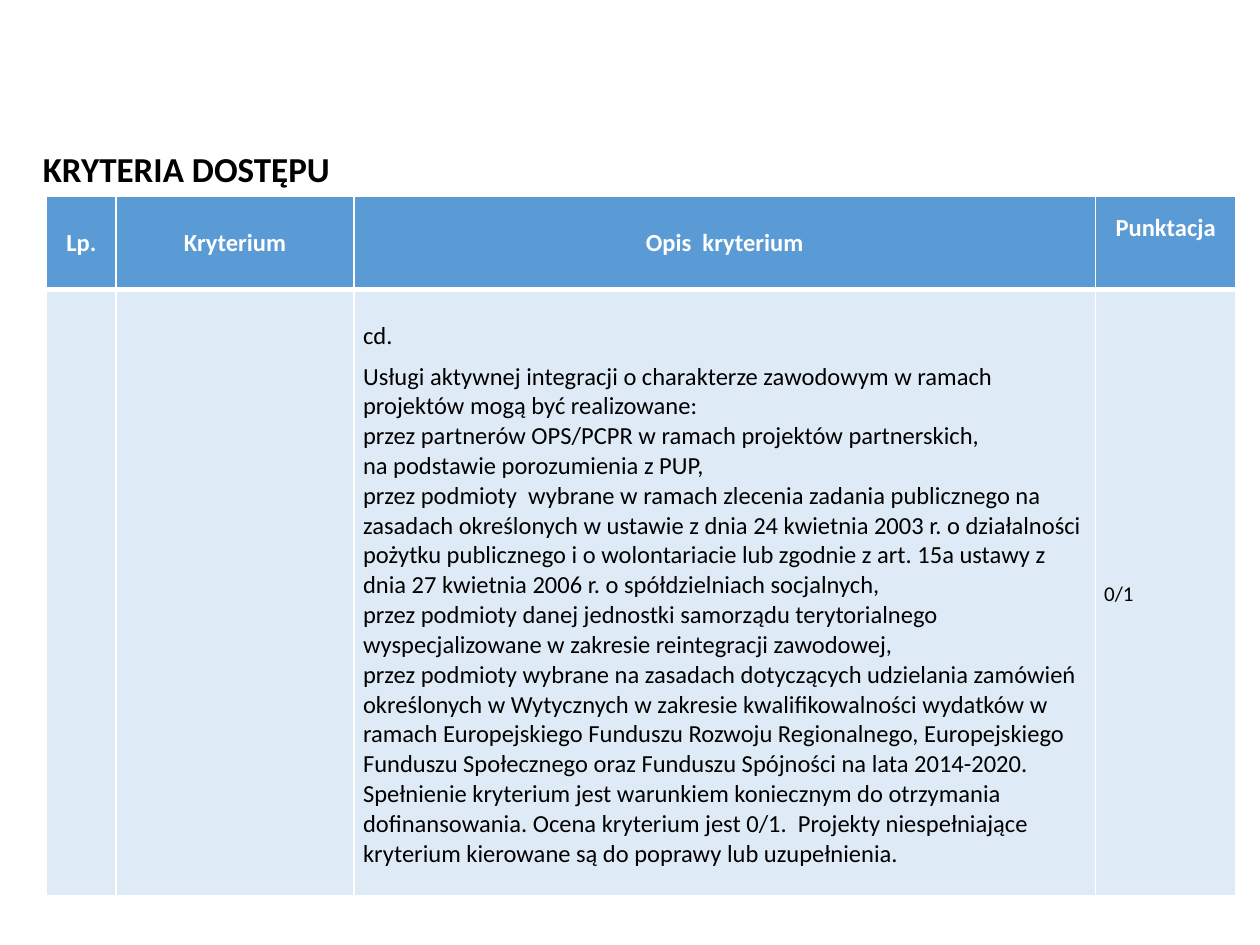
import pptx
import pptx.util
import pptx.dml.color
import pptx.enum.text
import pptx.oxml
from dataclasses import dataclass
from lxml import etree

Cm, Pt = pptx.util.Cm, pptx.util.Pt
Align = pptx.enum.text.PP_ALIGN
Anchor = pptx.enum.text.MSO_ANCHOR
NS = "http://schemas.openxmlformats.org/drawingml/2006/main"


@dataclass(frozen=True)
class Theme:
    font: str = "Calibri"
    ink: str = "000000"
    white: str = "FFFFFF"
    head: str = "5B9BD5"
    body: str = "DEEBF7"
    title: int = 20
    text: int = 14
    small: int = 12
    thin: int = 1
    thick: int = 3


THEME = Theme()

HEADS = ["Lp.", "Kryterium", "Opis  kryterium", "Punktacja"]
TERMS = [
    "cd.",
    "Usługi aktywnej integracji o charakterze zawodowym w ramach projektów mogą być realizowane:",
    "przez partnerów OPS/PCPR w ramach projektów partnerskich,",
    "na podstawie porozumienia z PUP,",
    "przez podmioty  wybrane w ramach zlecenia zadania publicznego na zasadach określonych "
    "w ustawie z dnia 24 kwietnia 2003 r. o działalności pożytku publicznego i o wolontariacie "
    "lub zgodnie z art. 15a ustawy z dnia 27 kwietnia 2006 r. o spółdzielniach socjalnych,",
    "przez podmioty danej jednostki samorządu terytorialnego wyspecjalizowane "
    "w zakresie reintegracji zawodowej,",
    "przez podmioty wybrane na zasadach dotyczących udzielania zamówień określonych "
    "w Wytycznych w zakresie kwalifikowalności wydatków w ramach Europejskiego Funduszu "
    "Rozwoju Regionalnego, Europejskiego Funduszu Społecznego oraz Funduszu Spójności "
    "na lata 2014-2020.",
    "Spełnienie kryterium jest warunkiem koniecznym do otrzymania dofinansowania. "
    "Ocena kryterium jest 0/1.  Projekty niespełniające kryterium kierowane są "
    "do poprawy lub uzupełnienia.",
]


def assign(item, values):
    for name, value in values.items():
        setattr(item, name, value)


def style(para, size, color, bold=False, **form):
    assign(para, form)
    assign(para.font, dict(name=THEME.font, size=Pt(size), bold=bold))
    para.font.color.rgb = pptx.dml.color.RGBColor.from_string(color)


def border(cell, top, bottom):
    props = cell._tc.get_or_add_tcPr()
    for side, width in dict(L=THEME.thin, R=THEME.thin, T=top, B=bottom).items():
        line = etree.SubElement(props, f"{{{NS}}}ln{side}", w=str(Pt(width)))
        fill = etree.SubElement(line, f"{{{NS}}}solidFill")
        etree.SubElement(fill, f"{{{NS}}}srgbClr", val=THEME.white)


def paint(cell, color, top, bottom):
    border(cell, top, bottom)
    cell.fill.solid()
    cell.fill.fore_color.rgb = pptx.dml.color.RGBColor.from_string(color)
    cell.vertical_anchor = Anchor.MIDDLE


def write(cell, lines, size):
    assign(cell, dict(margin_left=Cm(0.18), margin_right=Cm(0.18),
                      margin_top=0, margin_bottom=0))
    frame = cell.text_frame
    frame.text = "\n".join(lines)
    for para in frame.paragraphs:
        style(para, size, THEME.ink)
    assign(frame.paragraphs[0], dict(line_spacing=1.15, space_after=Pt(6)))


def heading(slide, left, top, width, height):
    title = slide.shapes.title
    assign(title, dict(left=left, top=top, width=width, height=height))
    frame = title.text_frame
    frame.text = "KRYTERIA DOSTĘPU"
    assign(frame, dict(word_wrap=True, vertical_anchor=Anchor.MIDDLE,
                       auto_size=pptx.enum.text.MSO_AUTO_SIZE.NONE))
    style(frame.paragraphs[0], THEME.title, THEME.ink, True, alignment=Align.LEFT)


def criteria(slide, left, top, width, height):
    table = slide.shapes.add_table(2, len(HEADS), left, top, width, height).table
    table.horz_banding = False

    # The description column takes the width left by the others
    sides = [Cm(1.4), Cm(4.8), Cm(2.84)]
    widths = sides[:2] + [width - sum(sides)] + sides[2:]
    for column, size in zip(table.columns, widths):
        column.width = size
    first = Cm(1.88)
    for row, size in zip(table.rows, [first, height - first]):
        row.height = size

    # Header row
    for col, label in enumerate(HEADS):
        cell = table.cell(0, col)
        paint(cell, THEME.head, THEME.thin, THEME.thick)
        cell.text = label
        style(cell.text_frame.paragraphs[0], THEME.text, THEME.white, True,
              alignment=Align.CENTER)
        paint_body = table.cell(1, col)
        paint(paint_body, THEME.body, THEME.thick, THEME.thin)
    table.cell(0, len(HEADS) - 1).margin_bottom = Cm(0.73)

    # Criterion row
    write(table.cell(1, 2), TERMS, THEME.text)
    write(table.cell(1, 3), ["0/1"], THEME.small)


def main():
    deck = pptx.Presentation()
    assign(deck, dict(slide_width=Cm(25.4), slide_height=Cm(19.05)))
    slide = deck.slides.add_slide(deck.slide_layouts[5])
    heading(slide, Cm(0.61), Cm(2.84), Cm(9.4), Cm(1.12))
    criteria(slide, Cm(0.94), Cm(3.96), Cm(23.98), Cm(14.1))
    deck.save("out.pptx")


if __name__ == "__main__":
    main()
